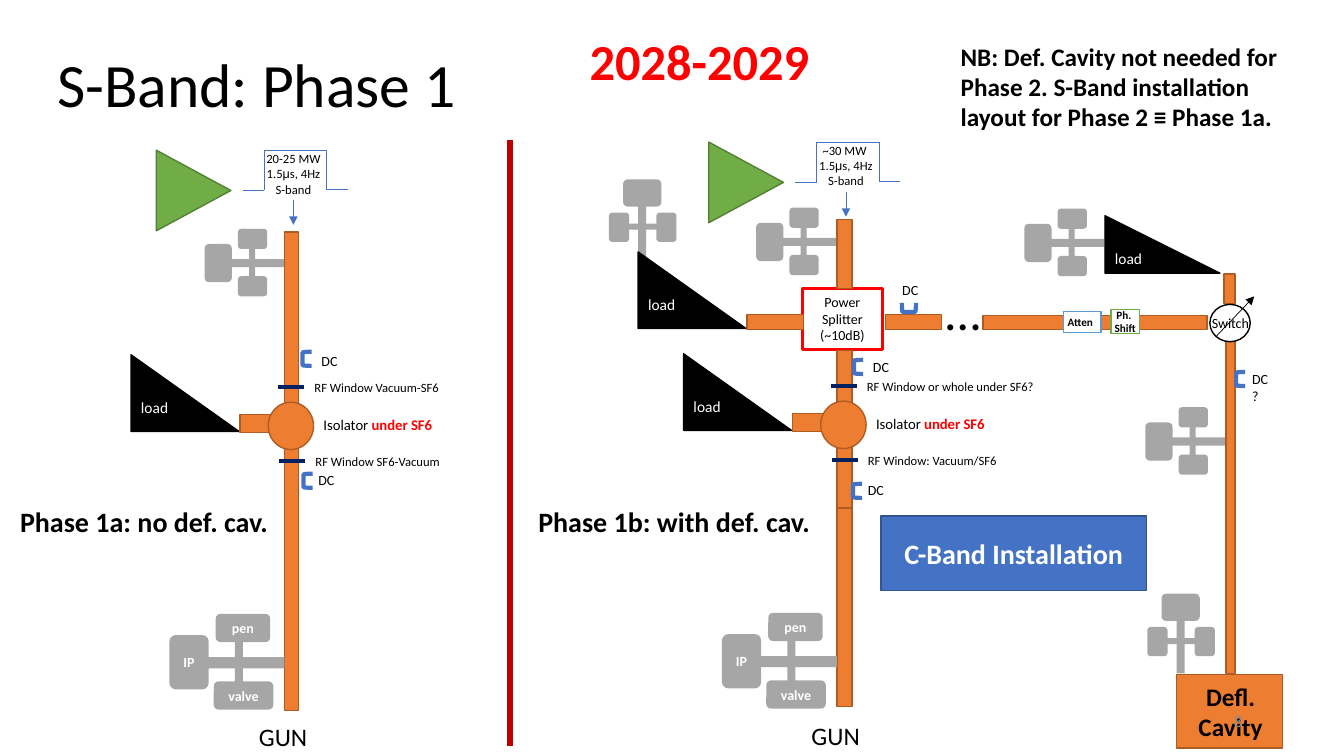
"""Build the S-Band Phase 1 waveguide layout slide."""
from lxml import etree
from pptx import Presentation
from pptx.dml.color import RGBColor
from pptx.enum.shapes import MSO_CONNECTOR, MSO_SHAPE
from pptx.enum.text import MSO_ANCHOR, MSO_AUTO_SIZE, PP_ALIGN
from pptx.oxml.ns import qn
from pptx.util import Inches, Pt

RECT, ROUND = MSO_SHAPE.RECTANGLE, MSO_SHAPE.ROUNDED_RECTANGLE
TRIANGLE, OVAL, BRACKET = MSO_SHAPE.ISOSCELES_TRIANGLE, MSO_SHAPE.OVAL, MSO_SHAPE.LEFT_BRACKET
STRAIGHT = MSO_CONNECTOR.STRAIGHT
LEFT, CENTER, RIGHT = PP_ALIGN.LEFT, PP_ALIGN.CENTER, PP_ALIGN.RIGHT
TOP, MIDDLE = MSO_ANCHOR.TOP, MSO_ANCHOR.MIDDLE
FIT, FIXED = MSO_AUTO_SIZE.SHAPE_TO_FIT_TEXT, MSO_AUTO_SIZE.NONE

BLACK, WHITE = RGBColor(0, 0, 0), RGBColor(255, 255, 255)
RED, DARK_RED = RGBColor(0xFF, 0, 0), RGBColor(0xC0, 0, 0)
ORANGE, RUST = RGBColor(0xED, 0x7D, 0x31), RGBColor(0xAF, 0x5C, 0x24)
GREEN, DARK_GREEN = RGBColor(0x70, 0xAD, 0x47), RGBColor(0x53, 0x80, 0x35)
BLUE, DARK_BLUE = RGBColor(0x44, 0x72, 0xC4), RGBColor(0x32, 0x54, 0x91)
SKY, NAVY = RGBColor(0x5B, 0x9B, 0xD5), RGBColor(0, 0x20, 0x60)
GRAY, PAGE_GRAY = RGBColor(0xA6, 0xA6, 0xA6), RGBColor(0x8C, 0x8C, 0x8C)

STATIONS = [
    {"shift": 0, "source_rise": 0, "rise": 0, "power": "20-25 MW ",
     "windows": [(3.84, 2.76, 1.45, "RF Window Vacuum-SF6"), (4.57, 2.77, 1.45, "RF Window SF6-Vacuum")]},
    {"shift": 5.48, "source_rise": 0.08, "rise": 0.01, "power": "~30 MW ",
     "windows": [(3.84, 2.76, 1.87, "RF Window or whole under SF6?"), (4.57, 2.77, 1.5, "RF Window: Vacuum/SF6")]},
]
ISOLATOR = [["Isolator ", ("under SF6", {"color": RED, "bold": True})]]
PULSE_TIMING = ["1.5", ("μ", {"font": "Arial"}), "s, 4Hz "]
PULSE_LINES = [(0, 0.4, 0.21, 0.4), (0.21, 0, 0.21, 0.4), (0.21, 0, 0.83, 0),
               (0.83, 0, 0.83, 0.4), (0.83, 0.39, 1.04, 0.39)]

SMALL_PUMP = [(RECT, -0.07, -0.04, 0.72, 0.08, ""), (ROUND, -0.14, -0.19, 0.27, 0.38, ""),
              (ROUND, 0.19, -0.34, 0.29, 0.2, ""), (ROUND, 0.19, 0.13, 0.29, 0.2, ""),
              (RECT, 0.3, -0.18, 0.06, 0.36, "")]
GUN_PUMP = [(RECT, -0.1, -0.05, 1.04, 0.11, ""), (RECT, 0.45, -0.25, 0.08, 0.51, ""),
            (ROUND, -0.2, -0.27, 0.39, 0.54, "IP"), (ROUND, 0.26, -0.48, 0.54, 0.28, "pen"),
            (ROUND, 0.24, 0.19, 0.59, 0.28, "valve")]
LEVEL_PUMPS = [(2.17, 2.61), (7.64, 2.4), (10.3, 2.41), (11.5, 4.38)]
UPRIGHT_PUMPS = [(11.71, 6.03), (6.37, 1.92)]

WAVEGUIDES = [
    (2.82, 2.3, 0.14, 4.75), (8.3, 3.48, 0.15, 1.56), (8.3, 5.04, 0.15, 1.97), (8.3, 2.18, 0.15, 0.68),
    (7.41, 3.12, 0.56, 0.15), (8.78, 3.12, 0.56, 0.15), (9.75, 3.13, 2.22, 0.14),
    (12.16, 3.39, 0.09, 3.29), (12.14, 2.72, 0.11, 0.29), (11.67, 6.69, 1.05, 0.73),
]
LOADS = [(1.3, 3.52, 1.07, 0.76), (6.78, 3.51, 1.07, 0.76), (6.33, 2.5, 1.07, 0.76), (10.96, 2.14, 1.14, 0.57)]
COUPLERS = [(3.0, 3.49, 0), (3.01, 4.7, 0), (8.47, 3.57, 0), (8.46, 4.8, 0), (8.97, 2.98, 270), (12.26, 3.69, 0)]
COUPLER_LABELS = [(3.09, 3.45, "DC"), (3.06, 4.63, "DC"), (8.56, 3.51, "DC"),
                  (8.51, 4.73, "DC"), (8.85, 2.74, "DC"), (12.32, 3.63, "DC?")]
BOXES = [((7.96, 2.86, 0.79, 0.61), None, RED, 2.25, "Power Splitter (~10dB)", {"size": 10, "align": CENTER}),
         ((10.55, 3.09, 0.37, 0.21), WHITE, SKY, 1, "", {}),
         ((11.02, 3.07, 0.28, 0.24), WHITE, GREEN, 1, "", {}),
         ((8.74, 5.12, 2.63, 0.74), BLUE, DARK_BLUE, 1, "C-Band Installation",
          {"size": 20, "color": WHITE, "bold": True, "align": CENTER, "anchor": MIDDLE})]
TEXTS = [
    ((0.47, 0.14, 11.5, 1.45), ["S-Band: Phase 1"],
     {"size": 44, "anchor": MIDDLE, "spacing": 0.9, "fit": FIXED}),
    ((5.75, 0.25, 2.4, 0.71), ["2028-2029"], {"size": 36, "color": RED, "bold": True, "wrap": False}),
    ((9.43, 0.36, 3.36, 1.01),
     ["NB: Def. Cavity not needed for Phase 2. S-Band installation layout for Phase 2 ≡ Phase 1a."],
     {"size": 18, "bold": True}),
    ((0.1, 4.96, 2.69, 0.44), ["Phase 1a: no def. cav."], {"size": 20, "bold": True, "wrap": False}),
    ((5.24, 4.96, 2.92, 0.44), ["Phase 1b: with def. cav."], {"size": 20, "bold": True, "wrap": False}),
    ((9.28, 2.73, 0.55, 0.71), ["…"], {"size": 36, "wrap": False}),
    ((10.49, 3.08, 0.46, 0.24), ["Atten"], {"size": 8, "bold": True, "wrap": False}),
    ((10.95, 3.01, 0.42, 0.37), ["Ph. ", "Shift"], {"size": 8, "bold": True, "align": CENTER}),
    ((11.92, 3.07, 0.58, 0.27), ["Switch"], {"size": 10, "wrap": False}),
    ((11.72, 6.71, 0.97, 0.71), ["Defl. Cavity"], {"size": 18, "bold": True, "align": CENTER}),
    ((9.42, 6.95, 3, 0.4), ["8"],
     {"size": 12, "color": PAGE_GRAY, "align": RIGHT, "anchor": MIDDLE, "fit": FIXED}),
]


def write_text(shape, paragraphs, *, size, color=BLACK, bold=False, font="Calibri",
               align=LEFT, anchor=TOP, wrap=True, spacing=None, fit=FIXED):
    frame = shape.text_frame
    frame.word_wrap, frame.vertical_anchor, frame.auto_size = wrap, anchor, fit
    for index, runs in enumerate(paragraphs):
        paragraph = frame.add_paragraph() if index else frame.paragraphs[0]
        paragraph.alignment = align
        if spacing:
            paragraph.line_spacing = spacing
        for item in [runs] if isinstance(runs, str) else runs:
            text, changes = (item, {}) if isinstance(item, str) else item
            run = paragraph.add_run()
            run.text = text
            run.font.size = Pt(size)
            run.font.name = changes.get("font", font)
            run.font.bold = changes.get("bold", bold)
            run.font.color.rgb = changes.get("color", color)


def add_label(slide, box, paragraphs, **text_format):
    shape = slide.shapes.add_textbox(*map(Inches, box))
    write_text(shape, paragraphs, **{"fit": FIT, **text_format})


def add_part(slide, kind, box, fill=None, line=None, width=1, rotation=0):
    shape = slide.shapes.add_shape(kind, *map(Inches, box))
    shape.shadow.inherit = False
    shape.rotation = rotation
    if fill is None:
        shape.fill.background()
    else:
        shape.fill.solid()
        shape.fill.fore_color.rgb = fill
    if line is None:
        shape.line.fill.background()
    else:
        shape.line.color.rgb = line
        shape.line.width = Pt(width)
    return shape


def add_line(slide, ends, color, width, arrow=False):
    connector = slide.shapes.add_connector(STRAIGHT, *map(Inches, ends))
    connector.line.color.rgb = color
    connector.line.width = Pt(width)
    if arrow:
        etree.SubElement(connector.line._get_or_add_ln(), qn("a:tailEnd"), type="triangle")
    etree.SubElement(connector._element.spPr, qn("a:effectLst"))


def add_pump(slide, parts, center, upright=False):
    for kind, x, y, width, height, label in parts:
        if upright:
            x, y, width, height = -y - height, x, height, width
        shape = add_part(slide, kind, (center[0] + x, center[1] + y, width, height), GRAY)
        if label:
            write_text(shape, [label], size=10, color=WHITE, bold=True, align=CENTER, anchor=MIDDLE)


def add_station(slide, station):
    shift, rise = station["shift"], station["rise"]
    pulse_x, pulse_y = 2.41 + shift, 1.49 - station["source_rise"]
    add_part(slide, TRIANGLE, (1.52 + shift, pulse_y + 0.03, 0.8, 0.74), GREEN, DARK_GREEN, rotation=90)
    for x1, y1, x2, y2 in PULSE_LINES:
        add_line(slide, (pulse_x + x1, pulse_y + y1, pulse_x + x2, pulse_y + y2), BLUE, 0.5)
    add_label(slide, (pulse_x + 0.13, pulse_y - 0.04, 0.74, 0.56),
              [station["power"], PULSE_TIMING, "S-band"], size=9, align=CENTER)
    add_line(slide, (pulse_x + 0.5, pulse_y + 0.49, pulse_x + 0.5, pulse_y + 0.74), BLUE, 0.5, arrow=True)
    add_part(slide, RECT, (2.38 + shift, 4.11 - rise, 0.44, 0.18), ORANGE, RUST)
    add_part(slide, OVAL, (2.66 + shift, 3.99 - rise, 0.45, 0.47), ORANGE, RUST)
    add_label(slide, (3.11 + shift, 4.08 - rise, 1.29, 0.28), ISOLATOR, size=10.5, wrap=False)
    for y, x, width, label in station["windows"]:
        left, top = x + shift, y - rise
        add_line(slide, (left, top, left + 0.26, top), NAVY, 3)
        add_label(slide, (left + 0.26, top - 0.12, width, 0.25), [label], size=9, wrap=False)
    add_pump(slide, GUN_PUMP, (1.88 + shift, 6.57 - rise))
    add_label(slide, (2.47 + shift, 7.11 - rise, 0.76, 0.4), ["GUN"], size=18, wrap=False)


def main():
    presentation = Presentation()
    presentation.slide_width, presentation.slide_height = Inches(13.33), Inches(7.5)
    slide = presentation.slides.add_slide(presentation.slide_layouts[6])
    for center in LEVEL_PUMPS:
        add_pump(slide, SMALL_PUMP, center)
    for center in UPRIGHT_PUMPS:
        add_pump(slide, SMALL_PUMP, center, upright=True)
    for box in LOADS:
        load = add_part(slide, TRIANGLE, box, BLACK, BLACK)
        load.adjustments[0] = 0
        write_text(load, ["load"], size=11, color=WHITE)
    for box, fill, line, width, label, text_format in BOXES:
        shape = add_part(slide, RECT, box, fill, line, width)
        if label:
            write_text(shape, [label], **text_format)
        if box == BOXES[0][0]:
            for waveguide in WAVEGUIDES:
                add_part(slide, RECT, waveguide, ORANGE, RUST)
    for station in STATIONS:
        add_station(slide, station)
    for x, y, rotation in COUPLERS:
        add_part(slide, BRACKET, (x, y, 0.09, 0.14), None, BLUE, 3, rotation)
    for x, y, label in COUPLER_LABELS:
        add_label(slide, (x, y, 0.36, 0.27), [label], size=10, wrap=False)
    for box, paragraphs, text_format in TEXTS:
        add_label(slide, box, paragraphs, **text_format)
    add_line(slide, (12.06, 3.34, 12.44, 2.94), BLACK, 0.5, arrow=True)
    add_part(slide, OVAL, (12, 3.02, 0.4, 0.37), None, BLACK)
    add_line(slide, (5.06, 1.39, 5.06, 7.4), DARK_RED, 4.5)
    presentation.save("out.pptx")


if __name__ == "__main__":
    main()
